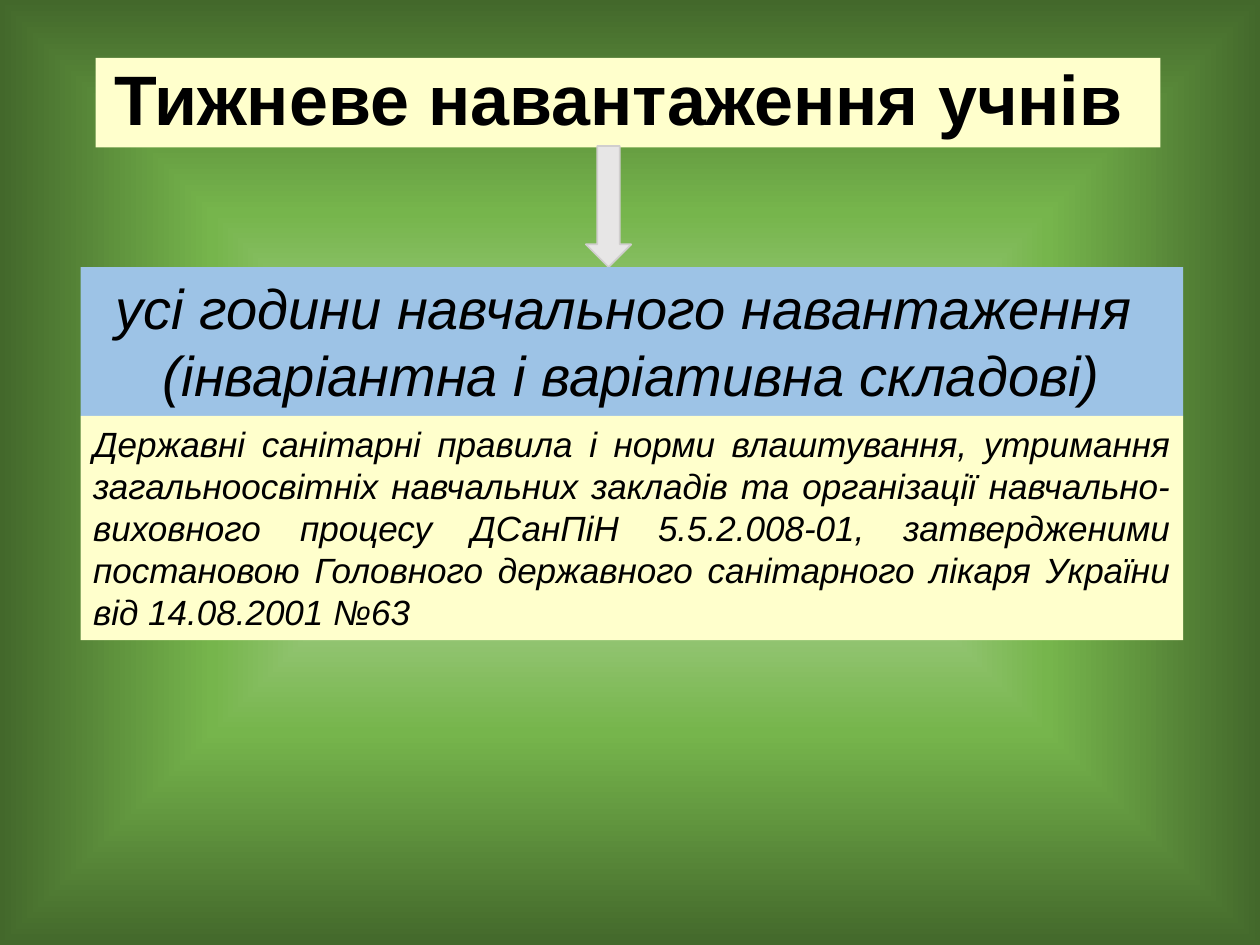
from pptx import Presentation
from pptx.dml.color import RGBColor
from pptx.enum.shapes import MSO_SHAPE as SHAPE
from pptx.enum.text import MSO_ANCHOR as ANCHOR, PP_ALIGN as ALIGN
from pptx.oxml import parse_xml
from pptx.oxml.ns import nsdecls, qn
from pptx.util import Inches, Pt

BLACK = RGBColor(0x00, 0x00, 0x00)
CREAM = RGBColor(0xFF, 0xFF, 0xCC)
BLUE = RGBColor(0x9D, 0xC3, 0xE6)
GREY = RGBColor(0xE7, 0xE6, 0xE6)
GREY_LINE = RGBColor(0xD0, 0xCE, 0xCE)
LIGHT_GREEN = RGBColor(0xC5, 0xE0, 0xB4)
GREEN = RGBColor(0x76, 0xB5, 0x4C)
DARK_GREEN = RGBColor(0x43, 0x68, 0x2B)


class Deck:
    """Holds the text style and the current slide, and adds elements to it."""

    font = "Arial"
    color = BLACK

    def __init__(self, width, height):
        self.prs = Presentation()
        self.prs.slide_width, self.prs.slide_height = Inches(width), Inches(height)
        self.s = self.prs.slides.add_slide(self.prs.slide_layouts[6])

    def background(self, stops):
        self.s.background.fill.gradient()
        old = self.s.element.find(".//" + qn("a:gradFill"))
        gs = "".join(
            f'<a:gs pos="{pos * 1000}"><a:srgbClr val="{color}"/></a:gs>'
            for pos, color in stops
        )
        new = parse_xml(
            f'<a:gradFill {nsdecls("a")} rotWithShape="1"><a:gsLst>{gs}</a:gsLst>'
            '<a:path path="shape"><a:fillToRect l="50000" t="50000" r="50000" b="50000"/>'
            "</a:path></a:gradFill>"
        )
        old.getparent().replace(old, new)

    def box(self, at, fill, lines, size, align=ALIGN.CENTER, anchor=ANCHOR.TOP,
            bold=False, italic=False, wrap=True, spacing=None):
        sp = self.s.shapes.add_textbox(*map(Inches, at))
        sp.fill.solid()
        sp.fill.fore_color.rgb = fill
        tf = sp.text_frame
        tf.word_wrap, tf.vertical_anchor = wrap, anchor
        tf.text = "\n".join(lines)
        for p in tf.paragraphs:
            p.alignment, p.line_spacing = align, spacing
            p.font.name, p.font.size = self.font, Pt(size)
            p.font.bold, p.font.italic = bold, italic
            p.font.color.rgb = self.color

    def down_arrow(self, at, fill, line):
        sp = self.s.shapes.add_shape(SHAPE.DOWN_ARROW, *map(Inches, at))
        sp.shadow.inherit = False
        sp.fill.solid()
        sp.fill.fore_color.rgb = fill
        sp.line.color.rgb = line
        sp.line.width = Pt(1)


def main():
    deck = Deck(10, 7.5)
    deck.background([(0, LIGHT_GREEN), (55, GREEN), (100, DARK_GREEN)])
    deck.box((0.76, 0.46, 8.45, 0.71), CREAM, ["Тижневе навантаження учнів "], 40,
             anchor=ANCHOR.MIDDLE, bold=True, wrap=False, spacing=0.9)
    deck.down_arrow((4.65, 1.16, 0.36, 0.96), GREY, GREY_LINE)
    deck.box((0.64, 2.12, 8.75, 1.18), BLUE,
             ["усі години навчального навантаження ",
              "(інваріантна і варіативна складові)"], 32, italic=True)
    deck.box((0.64, 3.3, 8.75, 1.78), CREAM,
             ["Державні санітарні правила і норми влаштування, утримання "
              "загальноосвітніх навчальних закладів та організації "
              "навчально-виховного процесу ДСанПіН 5.5.2.008-01, затвердженими "
              "постановою Головного державного санітарного лікаря України "
              "від 14.08.2001 №63"], 20, align=ALIGN.JUSTIFY, italic=True)
    deck.prs.save("out.pptx")


if __name__ == "__main__":
    main()
